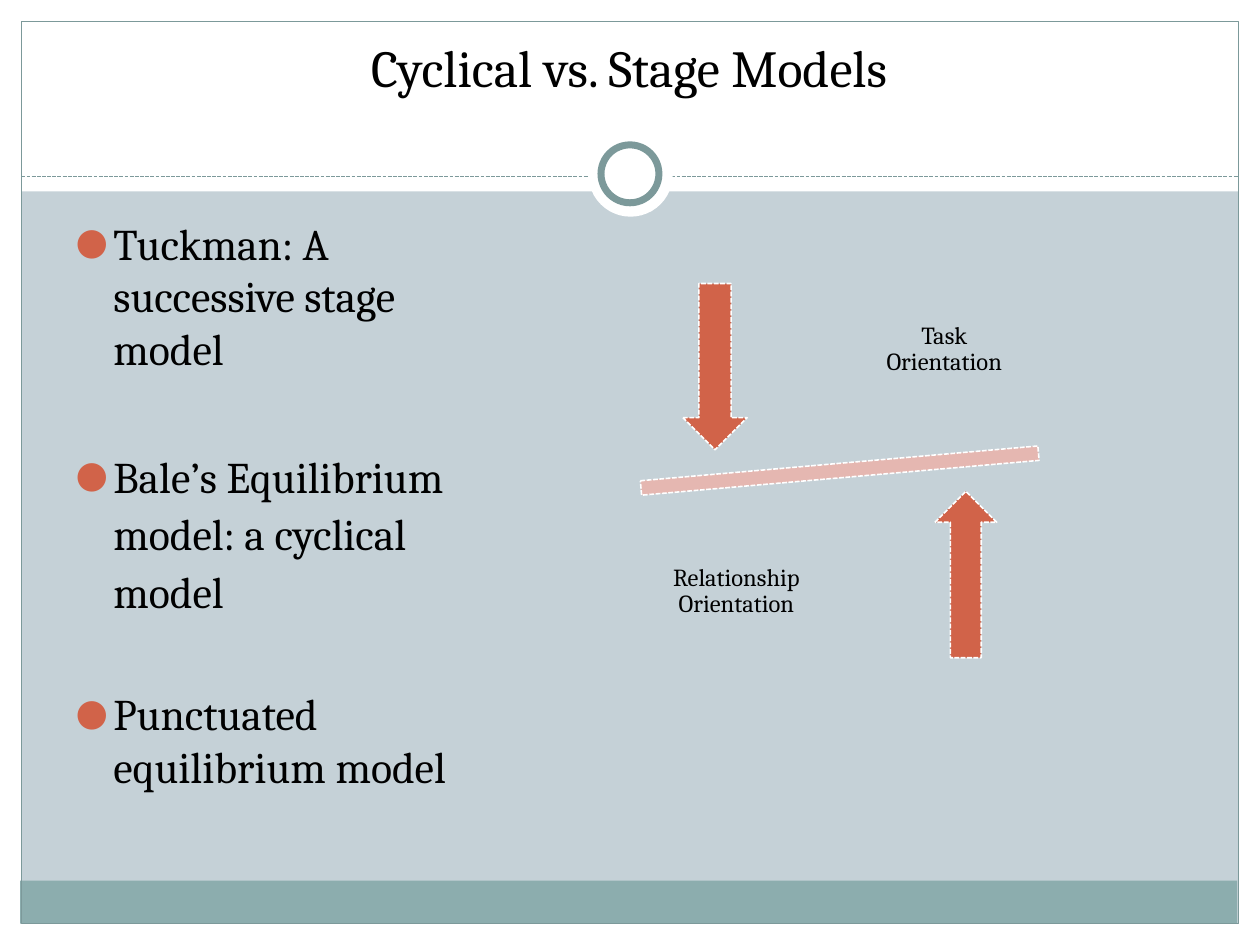
from dataclasses import dataclass
from typing import Optional

from lxml.etree import SubElement
from pptx import Presentation
from pptx.dml.color import RGBColor
from pptx.enum.dml import MSO_LINE
from pptx.enum.shapes import MSO_CONNECTOR, MSO_SHAPE
from pptx.enum.text import MSO_ANCHOR, MSO_AUTO_SIZE, PP_ALIGN
from pptx.oxml.ns import qn
from pptx.util import Inches, Pt

WHITE, BLACK, TEAL, RUST = "FFFFFF", "000000", "7C999A", "D16349"
FONT = "Cambria"


@dataclass
class Box:
    kind: MSO_SHAPE
    at: tuple[float, float, float, float]
    fill: Optional[str] = None
    line: Optional[str] = None
    width: float = 0.75
    dash: Optional[MSO_LINE] = None
    rotation: float = 0


@dataclass
class Label:
    text: str
    left: float
    top: float


@dataclass
class Bullet:
    text: str
    before: float
    spacing: float = 1.0


def color(value: str) -> RGBColor:
    return RGBColor.from_string(value)


def apply(obj, **values) -> None:
    for name, value in values.items():
        setattr(obj, name, value)


def place(sp, at: tuple[float, float, float, float]) -> None:
    apply(sp, **dict(zip(("left", "top", "width", "height"), map(Inches, at))))


def set_line(line, value: str, width: float, dash: Optional[MSO_LINE]) -> None:
    line.color.rgb = color(value)
    apply(line, width=Pt(width), dash_style=dash)


def draw_box(s, box: Box) -> None:
    sp = s.shapes.add_shape(box.kind, *map(Inches, box.at))
    sp.shadow.inherit = False
    sp.rotation = box.rotation
    if box.fill:
        sp.fill.solid()
        sp.fill.fore_color.rgb = color(box.fill)
    else:
        sp.fill.background()
    if box.line:
        set_line(sp.line, box.line, box.width, box.dash)
    else:
        sp.line.fill.background()


def write(p, text: str, size: float) -> None:
    r = p.add_run()
    r.text = text
    apply(r.font, name=FONT, size=Pt(size))
    r.font.color.rgb = color(BLACK)


def draw_label(s, label: Label) -> None:
    sp = s.shapes.add_textbox(*map(Inches, (label.left, label.top, 1.39, 1.39)))
    tf = sp.text_frame
    margins = dict.fromkeys(("margin_left", "margin_right", "margin_top", "margin_bottom"), Inches(0.11))
    apply(tf, word_wrap=True, vertical_anchor=MSO_ANCHOR.MIDDLE, **margins)
    p = tf.paragraphs[0]
    apply(p, alignment=PP_ALIGN.CENTER, line_spacing=0.9)
    write(p, label.text, 14)


def add_bullet(p, bullet: Bullet) -> None:
    apply(p, space_before=Pt(bullet.before), line_spacing=bullet.spacing)
    pPr = p._p.get_or_add_pPr()
    pPr.set("marL", str(Inches(0.3)))
    pPr.set("indent", str(-Inches(0.3)))
    SubElement(SubElement(pPr, qn("a:buClr")), qn("a:srgbClr"), val=RUST)
    SubElement(pPr, qn("a:buSzPct"), val="85000")
    SubElement(pPr, qn("a:buFont"), typeface=FONT)
    SubElement(pPr, qn("a:buChar"), char="●")
    write(p, bullet.text, 25)


FRAME = [
    Box(MSO_SHAPE.RECTANGLE, (0, 7.33, 10, 0.17), WHITE),
    Box(MSO_SHAPE.RECTANGLE, (0, 0, 10, 1.52), WHITE),
    Box(MSO_SHAPE.RECTANGLE, (0, 0, 0.17, 7.5), WHITE),
    Box(MSO_SHAPE.RECTANGLE, (9.83, 0, 0.17, 7.5), WHITE),
    Box(MSO_SHAPE.RECTANGLE, (0.16, 6.99, 9.66, 0.34), "8CADAE"),
    Box(MSO_SHAPE.RECTANGLE, (0.17, 0.17, 9.66, 7.16), line=TEAL),
]
RING = [
    Box(MSO_SHAPE.OVAL, (4.67, 1.05, 0.67, 0.67), WHITE),
    Box(MSO_SHAPE.OVAL, (4.77, 1.15, 0.46, 0.46), WHITE, TEAL, 4),
]
DASHED = {"line": WHITE, "width": 0.9, "dash": MSO_LINE.SQUARE_DOT}
BALANCE = [
    Box(MSO_SHAPE.MATH_MINUS, (4.51, 3.49, 4.31, 0.49), "E5B7B1", rotation=355, **DASHED),
    Box(MSO_SHAPE.DOWN_ARROW, (5.42, 2.25, 0.51, 1.32), RUST, **DASHED),
    Box(MSO_SHAPE.UP_ARROW, (7.42, 3.9, 0.49, 1.32), RUST, **DASHED),
]
LABELS = [
    Label("Task Orientation", 6.8, 2.08),
    Label("Relationship Orientation", 5.15, 4),
]
BULLETS = [
    Bullet("Tuckman: A successive stage model", 0),
    Bullet("Bale’s Equilibrium model: a cyclical model", 40, 1.1),
    Bullet("Punctuated equilibrium model", 40),
]


def main() -> None:
    prs = Presentation()
    apply(prs, slide_width=Inches(10), slide_height=Inches(7.5))
    s = prs.slides.add_slide(prs.slide_layouts[1])
    s.background.fill.solid()
    s.background.fill.fore_color.rgb = color("C5D1D7")

    for box in FRAME:
        draw_box(s, box)
    rule = s.shapes.add_connector(MSO_CONNECTOR.STRAIGHT, *map(Inches, (0.17, 1.4, 9.83, 1.4)))
    set_line(rule.line, TEAL, 0.75, MSO_LINE.SQUARE_DOT)
    SubElement(rule._element.spPr, qn("a:effectLst"))
    for box in RING:
        draw_box(s, box)

    title, body = s.shapes.title, s.placeholders[1]
    place(title, (0.33, 0.25, 9.33, 0.58))
    place(body, (0.5, 1.67, 3.5, 4.83))
    for sp, anchor in ((title, MSO_ANCHOR.BOTTOM), (body, MSO_ANCHOR.TOP)):
        apply(sp.text_frame, auto_size=MSO_AUTO_SIZE.NONE, word_wrap=True, vertical_anchor=anchor)
        s.shapes._spTree.append(sp._element)

    p = title.text_frame.paragraphs[0]
    p.alignment = PP_ALIGN.CENTER
    write(p, "Cyclical vs. Stage Models", 29.7)
    tf = body.text_frame
    for i, bullet in enumerate(BULLETS):
        add_bullet(tf.add_paragraph() if i else tf.paragraphs[0], bullet)

    for box in BALANCE:
        draw_box(s, box)
    for label in LABELS:
        draw_label(s, label)
    prs.save("out.pptx")


if __name__ == "__main__":
    main()
